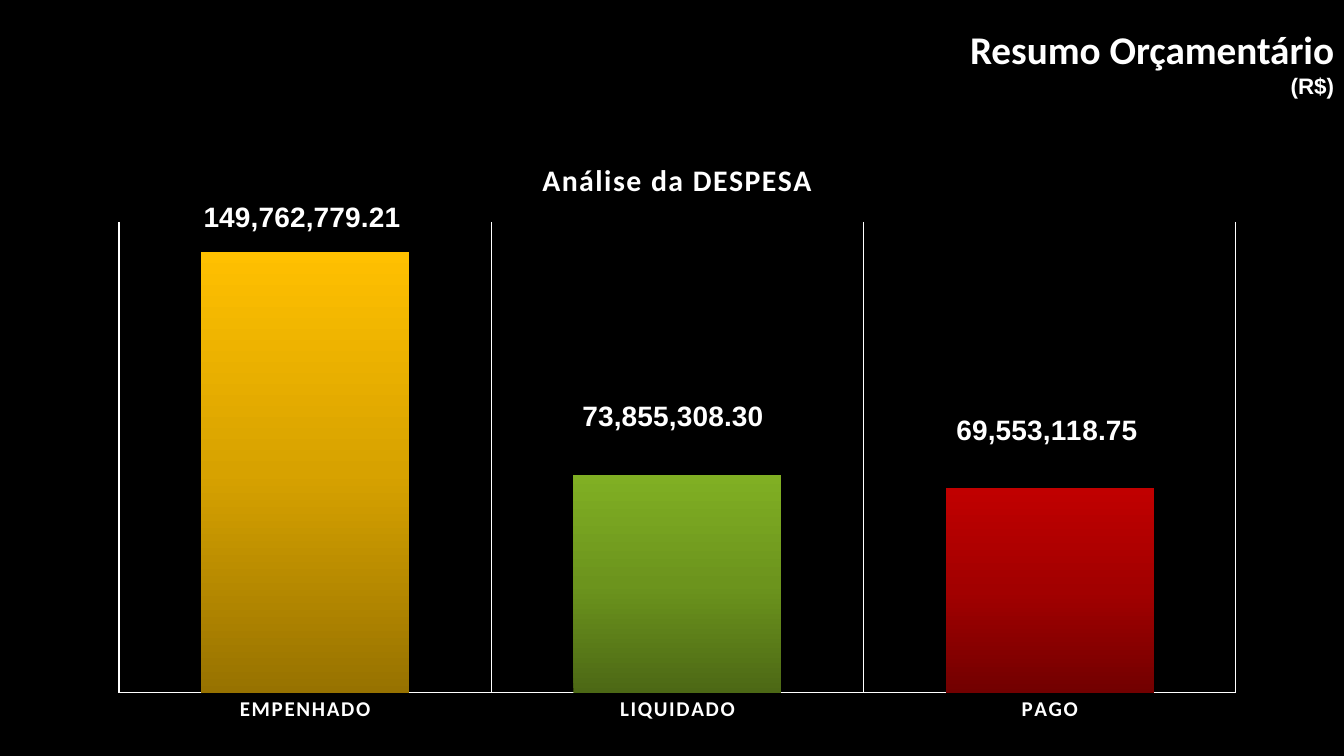
from copy import deepcopy

from lxml import etree
from pptx import Presentation
from pptx.chart.data import CategoryChartData
from pptx.dml.color import RGBColor
from pptx.enum import chart as charts, text
from pptx.oxml.ns import qn
from pptx.util import Emu, Pt

# Content
WHITE, BLACK = "FFFFFF", "000000"
HEADING = [("Resumo Orçamentário", 28, "Calibri"), ("(R$)", 16, "Arial")]
CHART_TITLE = "Análise da DESPESA"
NUMBER_FORMAT = "#,##0.00"
AXIS_MAX = 160_000_000
# category, value, gradient from bottom to top, label centre in px
EXPENSES = [
    ("EMPENHADO", 149762779.21, ("977200", "D7A200", "FFC000"), (302, 218)),
    ("LIQUIDADO", 73855308.30, ("4C6815", "6C941D", "80AF23"), (673, 417)),
    ("PAGO", 69553118.75, ("720000", "A20000", "C00000"), (1047, 431)),
]

# Boxes in px: left, top, width, height
HEADING_BOX = (494, 20, 850, 85)
CHART_BOX = (96, 137, 1163, 598)
PLOT_BOX = (119, 222, 1117, 471)
TITLE_AT = (537, 154)

C15 = "http://schemas.microsoft.com/office/drawing/2012/chart"
LABEL_EXTENSION = "{CE6537A1-D6FC-4f65-9D91-7224C49458BB}"


def px(n):
    return Emu(round(n * 914400 / 100.8))


def color(hex_code):
    return RGBColor.from_string(hex_code)


def style(font, size, name="Calibri", bold=True, fill=WHITE, spacing=None):
    font.size, font.name, font.bold = Pt(size), name, bold
    font.fill.solid()
    font.fill.fore_color.rgb = color(fill)
    if spacing:
        font._element.set("spc", str(spacing))


def add_text(p, content, **fmt):
    r = p.add_run()
    r.text = content
    style(r.font, **fmt)


def place(element, index, **settings):
    """Give a chart part a manual layout, as fractions of the chart."""
    for old in element.findall(qn("c:layout")):
        element.remove(old)
    layout = etree.Element(qn("c:layout"))
    manual = etree.SubElement(layout, qn("c:manualLayout"))
    for tag, value in settings.items():
        etree.SubElement(manual, qn("c:" + tag)).set("val", str(value))
    element.insert(index, layout)


def hide_leader_lines(dlbls):
    for lines in dlbls.findall(qn("c:showLeaderLines")):
        lines.set("val", "0")
    extensions = etree.SubElement(dlbls, qn("c:extLst"))
    ext = etree.SubElement(extensions, qn("c:ext"), uri=LABEL_EXTENSION)
    etree.SubElement(ext, f"{{{C15}}}showLeaderLines", nsmap={"c15": C15}).set("val", "0")


def fill_gradient(fill, stops):
    fill.gradient()
    fill.gradient_angle = 90
    first = fill.gradient_stops[0]._gs
    first.addnext(deepcopy(first))
    for i, (stop, hex_code) in enumerate(zip(fill.gradient_stops, stops)):
        stop.position = i / (len(stops) - 1)
        stop.color.rgb = color(hex_code)


prs = Presentation()
prs.slide_width, prs.slide_height = px(1344), px(756)
s = prs.slides.add_slide(prs.slide_layouts[6])
s.background.fill.solid()
s.background.fill.fore_color.rgb = color(BLACK)

# Heading
tf = s.shapes.add_textbox(*map(px, HEADING_BOX)).text_frame
tf.word_wrap = True
for i, (line, size, name) in enumerate(HEADING):
    p = tf.add_paragraph() if i else tf.paragraphs[0]
    p.alignment = text.PP_ALIGN.RIGHT
    add_text(p, line, size=size, name=name)

# Chart
data = CategoryChartData(number_format=NUMBER_FORMAT)
data.categories = [e[0] for e in EXPENSES]
data.add_series("Series 1", [e[1] for e in EXPENSES])
chart = s.shapes.add_chart(
    charts.XL_CHART_TYPE.COLUMN_STACKED, *map(px, CHART_BOX), data).chart
chart.has_legend = False
style(chart.font, 10, bold=False)
left, top, width, height = CHART_BOX
plot_left, plot_top, plot_width, plot_height = PLOT_BOX
place(chart._chartSpace.chart.plotArea, 0,
      layoutTarget="inner", xMode="edge", yMode="edge",
      x=(plot_left - left) / width, y=(plot_top - top) / height,
      w=plot_width / width, h=plot_height / height)

# Chart title
chart.has_title = True
title = chart.chart_title
add_text(title.text_frame.paragraphs[0], CHART_TITLE, size=21.3, spacing=120)
place(title._element, 1, xMode="edge", yMode="edge",
      x=(TITLE_AT[0] - left) / width, y=(TITLE_AT[1] - top) / height)

# Axes
value_axis, category_axis = chart.value_axis, chart.category_axis
value_axis.minimum_scale, value_axis.maximum_scale = 0, AXIS_MAX
value_axis.has_major_gridlines = False
value_axis.visible = False
category_axis.has_major_gridlines = True
category_axis.major_tick_mark = charts.XL_TICK_MARK.NONE
style(category_axis.tick_labels.font, 15, spacing=120)
for line in (category_axis.format.line, category_axis.major_gridlines.format.line):
    line.color.rgb = color(WHITE)
    line.width = Pt(0.75)

# Columns and their labels
plot = chart.plots[0]
plot.vary_by_categories = False
plot.gap_width, plot.overlap = 79, 100
series = plot.series[0]
series.format.fill.solid()
series.format.fill.fore_color.rgb = color("FCB11C")
labels = series.data_labels
labels.show_value = True
labels.number_format, labels.number_format_is_linked = NUMBER_FORMAT, False
labels.position = charts.XL_LABEL_POSITION.CENTER
style(labels.font, 20, "Arial")
slot = plot_width / len(EXPENSES)
for i, (_, value, stops, (label_x, label_y)) in enumerate(EXPENSES):
    point = series.points[i]
    fill_gradient(point.format.fill, stops)
    style(point.data_label.font, 20, "Arial")
    point.data_label.position = charts.XL_LABEL_POSITION.CENTER
    centre_x = plot_left + slot * (i + 0.5)
    centre_y = plot_top + plot_height * (1 - value / AXIS_MAX / 2)
    label = labels._element.findall(qn("c:dLbl"))[i]
    place(label, 1, x=(label_x - centre_x) / width, y=(label_y - centre_y) / height)
    number = etree.Element(qn("c:numFmt"), formatCode=NUMBER_FORMAT, sourceLinked="0")
    label.insert(2, number)
hide_leader_lines(labels._element)

prs.save("out.pptx")
